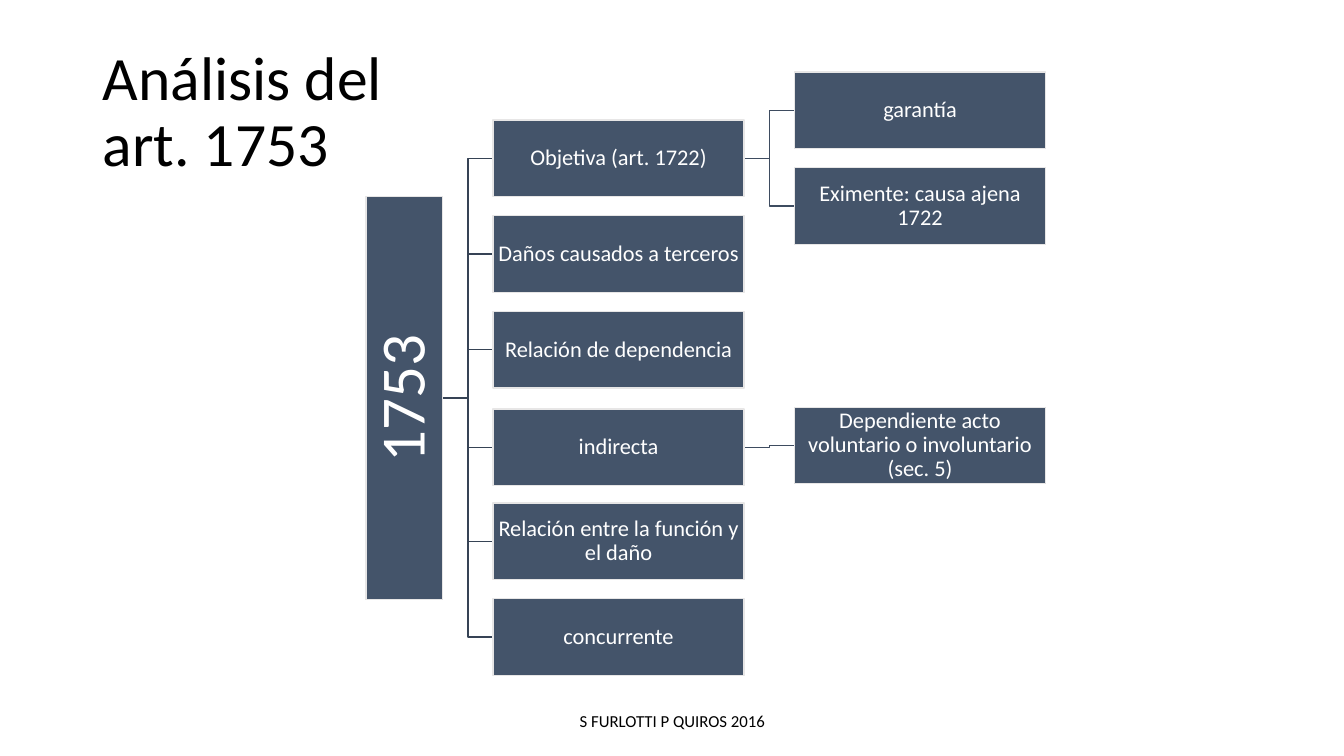
from dataclasses import dataclass

from pptx import Presentation
from pptx.dml.color import RGBColor
from pptx.enum.text import MSO_ANCHOR, MSO_AUTO_SIZE, PP_ALIGN
from pptx.shapes.group import GroupShape
from pptx.text.text import TextFrame
from pptx.util import Inches, Pt


@dataclass(frozen=True)
class Theme:
    font: str = "Calibri"
    ink: str = "000000"
    box_fill: str = "44546A"
    box_line: str = "E7E6E6"
    box_text: str = "FFFFFF"
    root_link: str = "364355"
    branch_link: str = "3E4C60"
    title_size: int = 44
    root_size: int = 45
    box_size: int = 16
    footer_size: int = 12


@dataclass(frozen=True)
class Branch:
    text: str
    children: tuple[str, ...] = ()
    shift: float = 0


@dataclass(frozen=True)
class Node:
    text: str
    left: float
    middle: float
    width: float
    size: int
    inset: float = 0.01
    rotation: int = 0


@dataclass(frozen=True)
class Link:
    left: float
    start: float
    end: float
    color: str


THEME = Theme()

# Tree geometry in inches
BOX_WIDTH, BOX_HEIGHT = 2.49, 0.76
ROW_STEP, FIRST_ROW = 0.95, 1.57
GAP = 0.5
ROOT_LENGTH, ROOT_RIGHT, ROOT_MIDDLE = 4, 4.39, 3.95
BRANCH_LEFT = ROOT_RIGHT + GAP
BRANCH_RIGHT = BRANCH_LEFT + BOX_WIDTH
CHILD_LEFT = BRANCH_RIGHT + GAP

BRANCHES = (
    Branch("Objetiva (art. 1722)", ("garantía", "Eximente: causa ajena 1722")),
    Branch("Daños causados a terceros"),
    Branch("Relación de dependencia"),
    Branch("indirecta", ("Dependiente acto voluntario o involuntario (sec. 5)",), 0.02),
    Branch("Relación entre la función y el daño"),
    Branch("concurrente"),
)


def write_text(frame: TextFrame, lines: tuple[str, ...], size: int, color: str,
               align: PP_ALIGN, spacing: float) -> None:
    frame.word_wrap = True
    frame.auto_size = MSO_AUTO_SIZE.NONE
    frame.vertical_anchor = MSO_ANCHOR.MIDDLE
    para = frame.paragraphs[0]
    para.alignment = align
    para.line_spacing = spacing
    for index, line in enumerate(lines):
        if index:
            para.add_line_break()
        span = para.add_run()
        span.text = line
        span.font.name = THEME.font
        span.font.size = Pt(size)
        span.font.color.rgb = RGBColor.from_string(color)


def draw_link(tree: GroupShape, link: Link) -> None:
    bend, right = link.left + GAP / 2, link.left + GAP
    builder = tree.shapes.build_freeform(Inches(link.left), Inches(link.start))
    corners = ((bend, link.start), (bend, link.end), (right, link.end))
    builder.add_line_segments([(Inches(x), Inches(y)) for x, y in corners], close=False)
    elbow = builder.convert_to_shape()
    elbow.shadow.inherit = False
    elbow.fill.background()
    elbow.line.color.rgb = RGBColor.from_string(link.color)
    elbow.line.width = Pt(1)


def draw_node(tree: GroupShape, node: Node) -> None:
    box = tree.shapes.add_shape(
        1, Inches(node.left), Inches(node.middle - BOX_HEIGHT / 2),
        Inches(node.width), Inches(BOX_HEIGHT))
    box.rotation = node.rotation
    box.shadow.inherit = False
    box.fill.solid()
    box.fill.fore_color.rgb = RGBColor.from_string(THEME.box_fill)
    box.line.color.rgb = RGBColor.from_string(THEME.box_line)
    box.line.width = Pt(1)
    frame = box.text_frame
    frame.margin_left = frame.margin_right = Inches(node.inset)
    frame.margin_top = frame.margin_bottom = Inches(node.inset)
    write_text(frame, (node.text,), node.size, THEME.box_text, PP_ALIGN.CENTER, 0.9)


def plan_tree() -> tuple[list[Node], list[Link]]:
    root_left = ROOT_RIGHT - BOX_HEIGHT / 2 - ROOT_LENGTH / 2
    nodes = [Node("1753", root_left, ROOT_MIDDLE, ROOT_LENGTH, THEME.root_size, 0.03, 270)]
    links = []
    for row, branch in enumerate(BRANCHES):
        row_middle = FIRST_ROW + row * ROW_STEP
        middle = row_middle + branch.shift
        nodes.append(Node(branch.text, BRANCH_LEFT, middle, BOX_WIDTH, THEME.box_size))
        links.append(Link(ROOT_RIGHT, ROOT_MIDDLE, middle, THEME.root_link))
        # Children are centred on their branch's row
        for index, child in enumerate(branch.children):
            child_middle = row_middle + (index - (len(branch.children) - 1) / 2) * ROW_STEP
            nodes.append(Node(child, CHILD_LEFT, child_middle, BOX_WIDTH, THEME.box_size))
            links.append(Link(BRANCH_RIGHT, middle, child_middle, THEME.branch_link))
    return nodes, links


def main() -> None:
    deck = Presentation()
    deck.slide_width, deck.slide_height = Inches(13.33), Inches(7.5)
    page = deck.slides.add_slide(deck.slide_layouts[5])

    # Title
    title = page.shapes.title
    title.left, title.top = Inches(0.92), Inches(0.4)
    title.width, title.height = Inches(11.5), Inches(1.45)
    write_text(title.text_frame, ("Análisis del", "art. 1753"),
               THEME.title_size, THEME.ink, PP_ALIGN.LEFT, 0.9)

    # Tree: links behind, boxes in front
    tree = page.shapes.add_group_shape()
    nodes, links = plan_tree()
    for link in links:
        draw_link(tree, link)
    for node in nodes:
        draw_node(tree, node)

    # Footer
    footer = page.shapes.add_textbox(Inches(4.42), Inches(6.95), Inches(4.5), Inches(0.4))
    write_text(footer.text_frame, ("S FURLOTTI P QUIROS 2016",),
               THEME.footer_size, THEME.ink, PP_ALIGN.CENTER, 1.0)

    deck.save("out.pptx")


if __name__ == "__main__":
    main()
